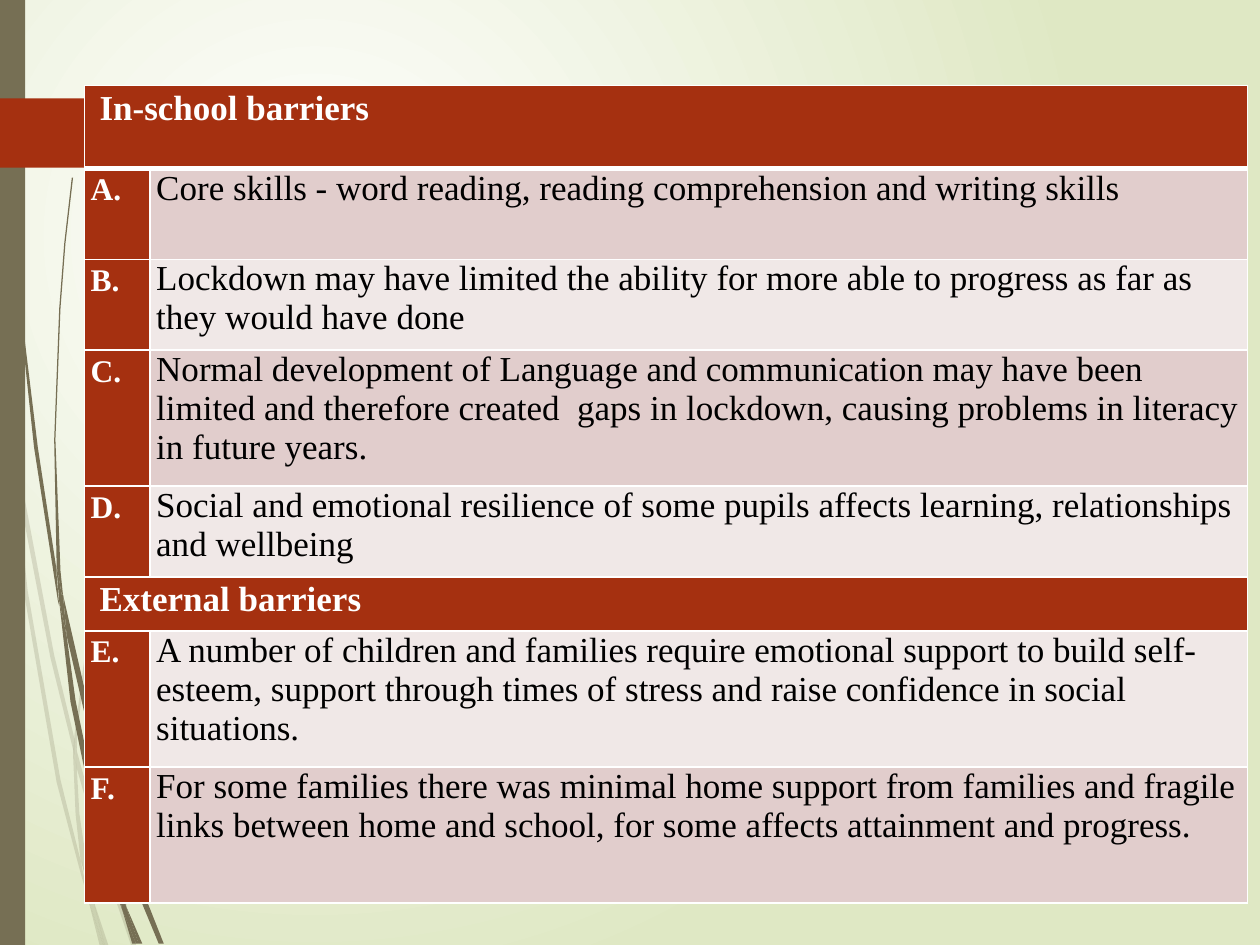
from pptx import Presentation
from pptx.dml.color import RGBColor
from pptx.enum.shapes import MSO_SHAPE
from pptx.oxml.ns import qn
from pptx.util import Pt
from lxml.etree import SubElement

PX = 9144  # EMU per px, 100 px to the inch
WIDTH, HEIGHT = 1000, 750

WHITE = RGBColor(0xFF, 0xFF, 0xFF)
BLACK = RGBColor(0, 0, 0)
PALE_GREEN = RGBColor(0xDF, 0xE8, 0xC4)
OLIVE = RGBColor(0x76, 0x6F, 0x54)
RUST = RGBColor(0xA5, 0x30, 0x10)
PINK = RGBColor(0xE1, 0xCD, 0xCC)
PALE_PINK = RGBColor(0xF0, 0xE8, 0xE7)

# Grass blades: outline points in px
FAINT_BLADES = [
    [(8, 350), (6, 322), (0, 282), (0, 299), (7, 344)],
    [(40, 522), (59, 599), (59, 586), (43, 520), (10, 345), (12, 376)],
    [(64, 607), (61, 596), (61, 610), (85, 694), (104, 750), (108, 750), (88, 692)],
    [(83, 750), (86, 750), (73, 711)],
    [(64, 683), (48, 619), (22, 469), (12, 376), (8, 350), (19, 470), (45, 621),
     (64, 693), (70, 714), (69, 707)],
    [(58, 599), (60, 646), (64, 683), (67, 692), (73, 711), (72, 706), (63, 646),
     (61, 610), (61, 608)],
    [(61, 584), (76, 462), (111, 349), (159, 245), (187, 198), (201, 175), (217, 154),
     (217, 153), (201, 175), (186, 197), (158, 244), (110, 348), (75, 461), (59, 584),
     (59, 586), (61, 596)],
    [(70, 714), (79, 750), (82, 750)],
    [(61, 608), (61, 610), (61, 596), (59, 586), (58, 599)],
    [(67, 692), (65, 683), (69, 707), (70, 714), (82, 750), (83, 750), (73, 711)],
]
DARK_BLADES = [
    [(5, 110), (14, 233), (27, 355), (46, 477), (47, 481), (45, 457), (45, 453),
     (30, 355), (15, 232), (6, 109), (4, 48), (3, 0), (2, 0), (3, 48)],
    [(73, 592), (88, 645), (88, 633), (88, 631), (77, 590), (50, 472), (53, 505)],
    [(94, 649), (91, 641), (91, 656), (109, 708), (126, 749), (130, 749), (113, 706)],
    [(91, 691), (81, 657), (60, 556), (53, 505), (47, 477), (56, 557), (77, 659),
     (92, 708), (97, 722), (96, 717)],
    [(50, 472), (48, 453), (44, 349), (48, 245), (52, 193), (58, 141), (57, 141),
     (51, 193), (47, 245), (43, 349), (45, 449), (49, 472)],
    [(110, 749), (113, 749), (100, 719)],
    [(47, 477), (53, 505), (50, 472), (49, 472), (45, 449), (45, 453)],
    [(91, 633), (103, 552), (131, 476), (169, 406), (191, 374), (203, 359), (216, 344),
     (215, 344), (203, 358), (191, 373), (168, 405), (129, 474), (101, 551), (88, 631),
     (91, 641)],
    [(97, 722), (105, 749), (108, 749)],
    [(88, 645), (91, 691), (96, 706), (100, 719), (100, 716), (91, 656), (90, 651)],
    [(88, 645), (90, 651), (91, 656), (91, 641), (88, 631), (88, 633)],
    [(96, 706), (91, 691), (96, 717), (97, 722), (108, 749), (110, 749), (100, 719)],
]
PAGE_TAG = [(0, 78), (121, 78), (124, 79), (149, 104), (149, 107), (124, 132),
            (121, 133), (0, 133)]

# Table rows: height, label, text (a row without a text is a heading)
BARRIERS = [
    (66, "In-school barriers", None),
    (72, "A.", "Core skills - word reading, reading comprehension and writing skills"),
    (72, "B.", "Lockdown may have limited the ability for more able to progress as far as "
               "they would have done"),
    (108, "C.", "Normal development of Language and communication may have been limited and "
                "therefore created  gaps in lockdown, causing problems in literacy in "
                "future years."),
    (72, "D.", "Social and emotional resilience of some pupils affects learning, "
               "relationships and wellbeing"),
    (43, "External barriers", None),
    (108, "E.", "A number of children and families require emotional support to build "
                "self-esteem, support through times of stress and raise confidence in "
                "social situations."),
    (108, "F.", "For some families there was minimal home support from families and fragile "
                "links between home and school, for some affects attainment and progress."),
]


class SlideBuilder:
    font = "Times New Roman"

    def __init__(self, page):
        self.page = page

    def background(self, inner, outer):
        fill = self.page.background.fill
        fill.gradient()
        for stop, color, position in zip(fill.gradient_stops, (inner, outer), (0, 1)):
            stop.color.rgb = color
            stop.position = position
        linear = self.page.element.find(".//" + qn("a:lin"))
        gradient = linear.getparent()
        gradient.remove(linear)
        circle = SubElement(gradient, qn("a:path"), path="circle")
        SubElement(circle, qn("a:fillToRect"), l="50000", t="50000", r="100000", b="100000")

    def paint(self, shape, color, alpha=100):
        shape.shadow.inherit = False
        shape.fill.solid()
        shape.fill.fore_color.rgb = color
        shape.line.fill.background()
        if alpha < 100:
            tint = shape.element.spPr.find(".//" + qn("a:srgbClr"))
            SubElement(tint, qn("a:alpha"), val=str(alpha * 1000))

    def rectangle(self, left, top, width, height, color):
        place = [value * PX for value in (left, top, width, height)]
        self.paint(self.page.shapes.add_shape(MSO_SHAPE.RECTANGLE, *place), color)

    def outline(self, points, color, alpha=100, shapes=None):
        if shapes is None:
            shapes = self.page.shapes
        builder = shapes.build_freeform(*points[0], scale=PX)
        builder.add_line_segments(points[1:], close=True)
        self.paint(builder.convert_to_shape(), color, alpha)

    def blades(self, outlines, color, alpha=100):
        group = self.page.shapes.add_group_shape()
        for points in outlines:
            self.outline(points, color, alpha, group.shapes)

    def borders(self, cell, top=1, bottom=1):
        properties = cell._tc.get_or_add_tcPr()
        sides = (("L", 1), ("R", 1), ("T", top), ("B", bottom))
        for index, (side, points) in enumerate(sides):
            line = SubElement(properties, qn("a:ln" + side), w=str(Pt(points)))
            solid = SubElement(line, qn("a:solidFill"))
            SubElement(solid, qn("a:srgbClr"), val=str(WHITE))
            properties.insert(index, line)

    def cell_style(self, cell, color, left=5, edge=3):
        cell.fill.solid()
        cell.fill.fore_color.rgb = color
        cell.margin_left, cell.margin_right = left * PX, 5 * PX
        cell.margin_top = cell.margin_bottom = edge * PX

    def cell_text(self, cell, text, size, color, bold):
        span = cell.text_frame.paragraphs[0].add_run()
        span.text = text
        span.font.name = self.font
        span.font.size = Pt(size)
        span.font.color.rgb = color
        span.font.bold = bold

    def barrier_table(self, left, top, widths, rows):
        height = sum(row[0] for row in rows)
        frame = self.page.shapes.add_table(
            len(rows), len(widths), left * PX, top * PX, sum(widths) * PX, height * PX)
        table = frame.table
        table.first_row = table.horz_banding = False
        for column, width in zip(table.columns, widths):
            column.width = width * PX
        for index, (row_height, label, text) in enumerate(rows):
            table.rows[index].height = row_height * PX
            first, second = table.cell(index, 0), table.cell(index, 1)
            if text is None:
                first.merge(second)
                self.cell_style(first, RUST, left=12)
                self.cell_style(second, RUST)
                self.cell_text(first, label, 20, WHITE, True)
            else:
                self.cell_style(first, RUST)
                self.cell_text(first, label, 18, WHITE, True)
                self.cell_style(second, PINK if index % 2 else PALE_PINK, edge=0)
                self.cell_text(second, text, 20, BLACK, False)
            for cell in (first, second):
                self.borders(cell, top=3 if index == 1 else 1, bottom=3 if index == 0 else 1)


def main():
    deck = Presentation()
    deck.slide_width, deck.slide_height = WIDTH * PX, HEIGHT * PX
    builder = SlideBuilder(deck.slides.add_slide(deck.slide_layouts[6]))

    # Backdrop
    builder.background(WHITE, PALE_GREEN)
    builder.blades(FAINT_BLADES, OLIVE, alpha=20)
    builder.blades(DARK_BLADES, OLIVE)
    builder.rectangle(0, 0, 20, HEIGHT, OLIVE)
    builder.outline(PAGE_TAG, RUST)

    # Barriers
    builder.barrier_table(67, 68, (52, 871), BARRIERS)
    deck.save("out.pptx")


if __name__ == "__main__":
    main()
